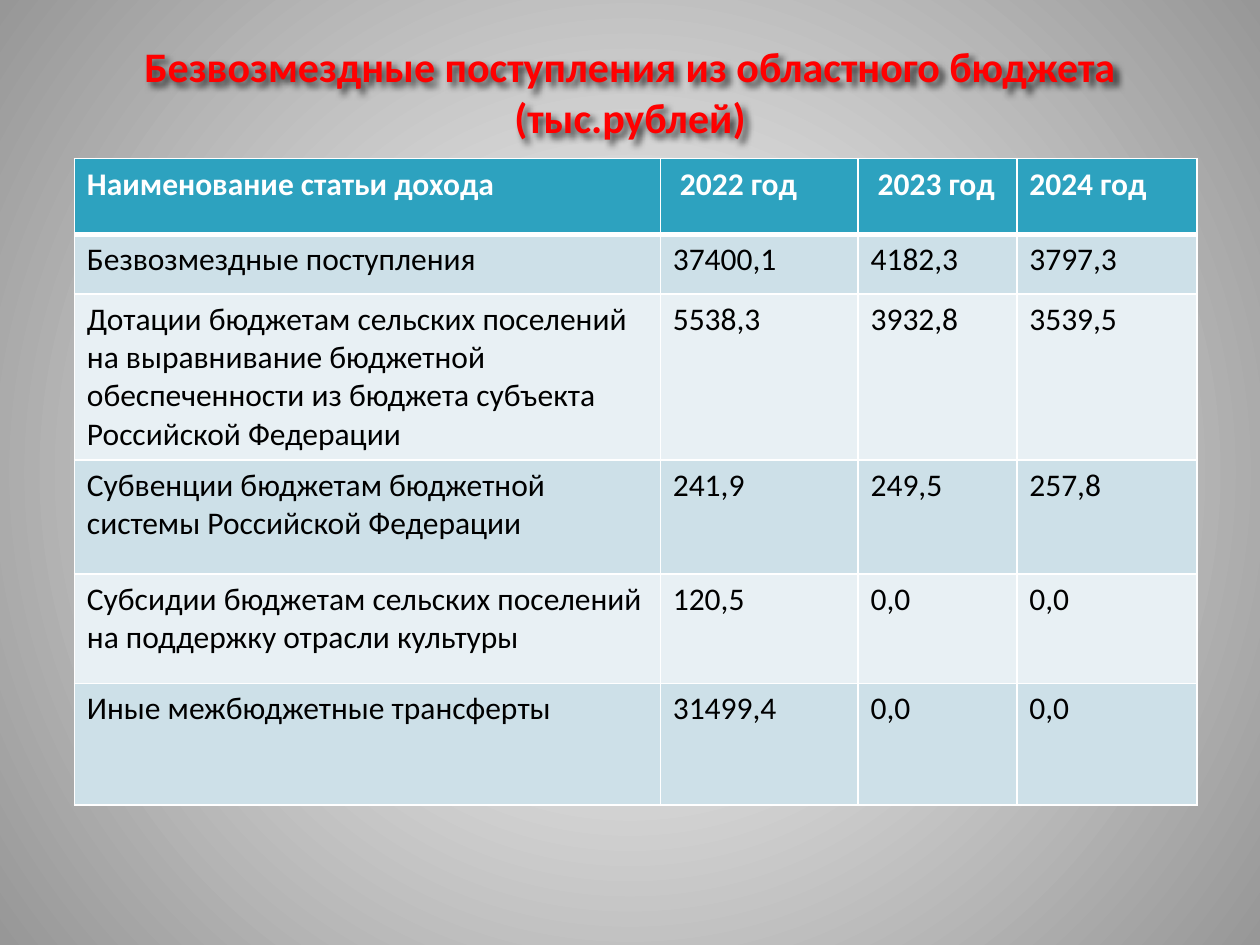
from dataclasses import dataclass

from lxml import etree
from pptx import Presentation
from pptx.dml.color import RGBColor
from pptx.enum import text
from pptx.oxml import ns
from pptx.util import Inches, Pt


@dataclass(frozen=True)
class Theme:
    font: str = "Calibri"
    title_size: int = 24
    body_size: int = 18
    title: str = "FF0000"
    header: str = "2DA2BF"
    header_text: str = "FFFFFF"
    body_text: str = "000000"
    bands: tuple = ("CDE0E8", "E8F0F4")
    border: str = "FFFFFF"
    backdrop: tuple = ("FFFFFF", "979797")
    shadow: str = "000000"


THEME = Theme()
TITLE = "Безвозмездные поступления из областного бюджета (тыс.рублей)"
INCOME = [
    ("Наименование статьи дохода", " 2022 год", " 2023 год", "2024 год"),
    ("Безвозмездные поступления", "37400,1", "4182,3", "3797,3"),
    ("Дотации бюджетам сельских поселений на выравнивание бюджетной "
     "обеспеченности из бюджета субъекта Российской Федерации",
     "5538,3", "3932,8", "3539,5"),
    ("Субвенции бюджетам бюджетной системы Российской Федерации",
     "241,9", "249,5", "257,8"),
    ("Субсидии бюджетам сельских поселений на поддержку отрасли культуры",
     "120,5", "0,0", "0,0"),
    ("Иные межбюджетные трансферты", "31499,4", "0,0", "0,0"),
]
COLUMN_WIDTHS = (4.65, 1.57, 1.26, 1.43)
ROW_HEIGHTS = (0.6, 0.47, 1.3, 0.9, 0.87, 0.96)


def add_xml(parent, tag, **attributes):
    return etree.SubElement(
        parent, ns.qn(tag), {key: str(value) for key, value in attributes.items()})


def format_font(font, color, size, bold):
    values = {"name": THEME.font, "size": Pt(size), "bold": bold}
    for key, value in values.items():
        setattr(font, key, value)
    font.color.rgb = RGBColor.from_string(color)


def paint_background(slide):
    fill = slide.background.fill
    fill.gradient()
    for stop, color, position in zip(fill.gradient_stops, THEME.backdrop, (0, 1)):
        stop.color.rgb = RGBColor.from_string(color)
        stop.position = position
    gradient = slide.element.find(".//" + ns.qn("a:gradFill"))
    gradient.remove(gradient.find(ns.qn("a:lin")))
    center = add_xml(gradient, "a:path", path="circle")
    add_xml(center, "a:fillToRect", l=50000, t=50000, r=50000, b=50000)


def add_shadow(shape):
    effects = add_xml(shape.element.spPr, "a:effectLst")
    shadow = add_xml(effects, "a:outerShdw", blurRad=Pt(4), dist=Pt(3),
                     dir=2700000, algn="tl", rotWithShape=0)
    color = add_xml(shadow, "a:srgbClr", val=THEME.shadow)
    add_xml(color, "a:alpha", val=70000)


def place_title(slide, left, top, width, height):
    title = slide.shapes.title
    box = {"left": left, "top": top, "width": width, "height": height}
    for key, value in box.items():
        setattr(title, key, Inches(value))
    add_shadow(title)
    frame = title.text_frame
    frame.text = TITLE
    frame.vertical_anchor = text.MSO_ANCHOR.MIDDLE
    paragraph = frame.paragraphs[0]
    paragraph.alignment = text.PP_ALIGN.CENTER
    format_font(paragraph.runs[0].font, THEME.title, THEME.title_size, True)


def add_borders(cell, top_width, bottom_width):
    properties = cell._tc.get_or_add_tcPr()
    widths = {"a:lnL": 1, "a:lnR": 1, "a:lnT": top_width, "a:lnB": bottom_width}
    for side, width in widths.items():
        line = add_xml(properties, side, w=Pt(width))
        add_xml(add_xml(line, "a:solidFill"), "a:srgbClr", val=THEME.border)


def format_cell(cell, row):
    is_header = row == 0
    add_borders(cell, 3 if row == 1 else 1, 3 if is_header else 1)
    fill = THEME.header if is_header else THEME.bands[(row - 1) % 2]
    cell.fill.solid()
    cell.fill.fore_color.rgb = RGBColor.from_string(fill)
    color = THEME.header_text if is_header else THEME.body_text
    format_font(cell.text_frame.paragraphs[0].runs[0].font,
                color, THEME.body_size, is_header)


def place_income_table(slide, left, top, width, height):
    income = slide.shapes.add_table(
        len(INCOME), len(COLUMN_WIDTHS),
        Inches(left), Inches(top), Inches(width), Inches(height)).table
    for column, share in zip(income.columns, COLUMN_WIDTHS):
        column.width = Inches(width * share / sum(COLUMN_WIDTHS))
    for row, share in zip(income.rows, ROW_HEIGHTS):
        row.height = Inches(height * share / sum(ROW_HEIGHTS))
    for row, entries in enumerate(INCOME):
        for column, entry in enumerate(entries):
            cell = income.cell(row, column)
            cell.text = entry
            format_cell(cell, row)


def main():
    deck = Presentation()
    deck.slide_width, deck.slide_height = Inches(10), Inches(7.5)
    slide = deck.slides.add_slide(deck.slide_layouts.get_by_name("Title Only"))
    paint_background(slide)
    place_title(slide, 0.5, 0.3, 9, 0.85)
    place_income_table(slide, 0.59, 1.26, 8.91, 5.11)
    deck.save("out.pptx")


if __name__ == "__main__":
    main()
